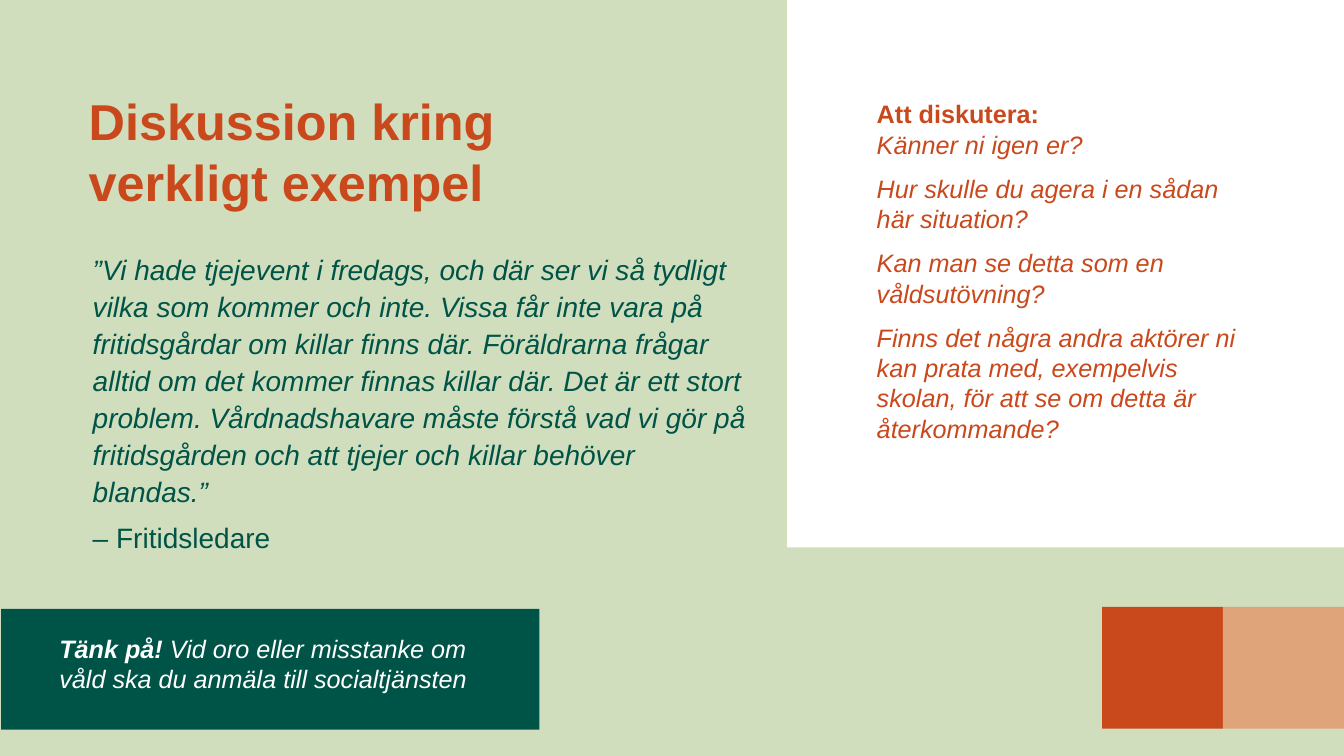
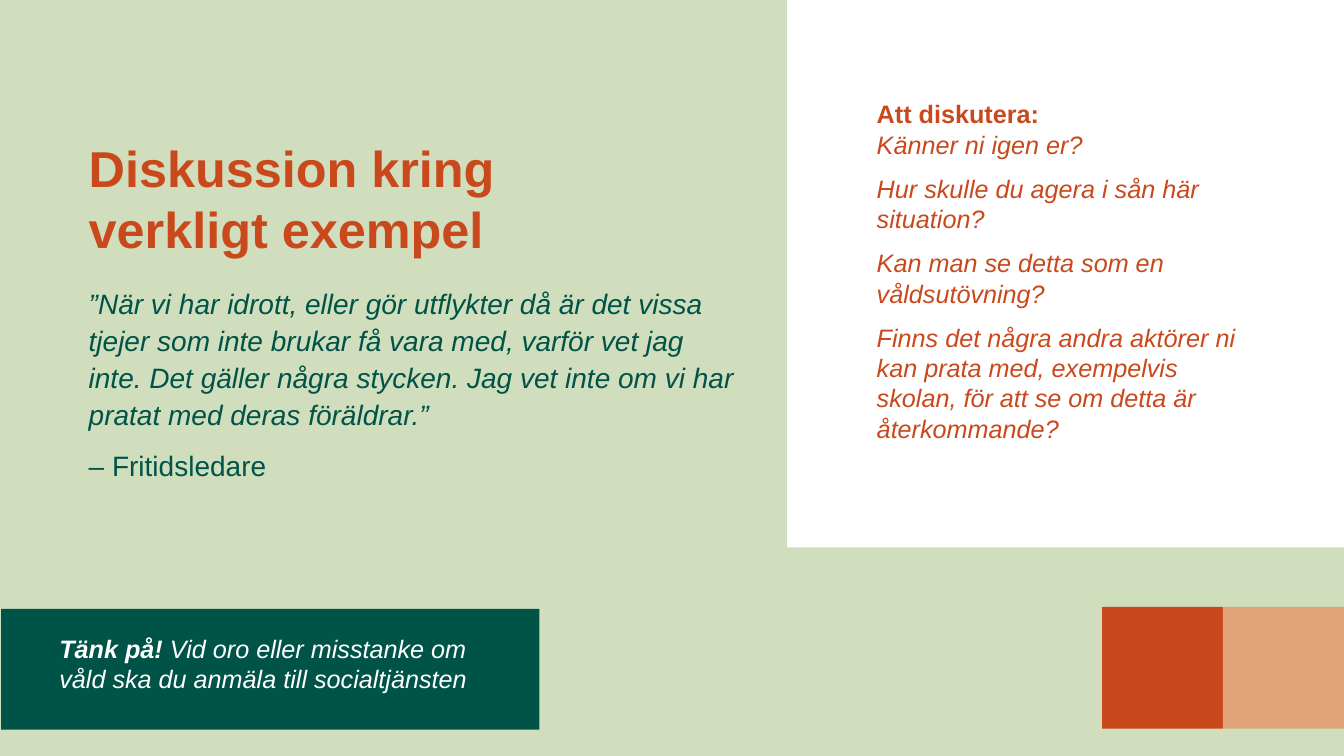
from dataclasses import dataclass
from typing import Any, NamedTuple

from lxml.etree import SubElement
from pptx import Presentation
from pptx.dml.color import RGBColor
from pptx.enum.shapes import MSO_SHAPE
from pptx.enum.text import MSO_ANCHOR, MSO_AUTO_SIZE, PP_ALIGN
from pptx.oxml.ns import qn
from pptx.util import Inches, Pt

W, H = Inches(13.333), Inches(7.5)


@dataclass(frozen=True)
class Theme:
    font: str = "Arial"
    sage: str = "D0DEBD"
    rust: str = "C9491C"
    sand: str = "DFA479"
    forest: str = "005447"
    white: str = "FFFFFF"
    title: int = 36
    quote: int = 20
    small: int = 18


class Box(NamedTuple):
    """Left, top, width and height in percent of the slide."""
    x: float
    y: float
    w: float
    h: float

    def emu(self) -> dict[str, int]:
        return {"left": round(W * self.x / 100), "top": round(H * self.y / 100),
                "width": round(W * self.w / 100), "height": round(H * self.h / 100)}


class Run(NamedTuple):
    text: str
    bold: bool = False
    italic: bool = False


class Para(NamedTuple):
    runs: list[Run]
    fmt: dict[str, Any] = {}


class Style(NamedTuple):
    size: int
    color: str


@dataclass(frozen=True)
class Discussion:
    title_box: Box
    quote_box: Box
    quote: str
    source_spacing: Any
    situation: str


T = Theme()
PANEL = Box(58.57, 0, 41.43, 72.4)
PROMPTS = Box(64.5, 12.4, 29.48, 53.2)
NOTE_BAND = Box(0.08, 80.53, 40.05, 16)
NOTE = Box(3.68, 83.07, 32.6, 13.47)
SQUARES = [(Box(82 + 9 * i, 80.27, 9, 16.13), c) for i, c in enumerate((T.rust, T.sand))]

DISCUSSIONS = [
    Discussion(
        Box(5.85, 3.47, 54.68, 25.2), Box(6.15, 32.27, 50.4, 34.93),
        "”Vi hade tjejevent i fredags, och där ser vi så tydligt vilka som kommer "
        "och inte. Vissa får inte vara på fritidsgårdar om killar finns där. "
        "Föräldrarna frågar alltid om det kommer finnas killar där. Det är ett "
        "stort problem. Vårdnadshavare måste förstå vad vi gör på fritidsgården "
        "och att tjejer och killar behöver blandas.”",
        Pt(23), "Hur skulle du agera i en sådan här situation?"),
    Discussion(
        Box(5.85, 9.73, 54.68, 25.2), Box(5.85, 36.8, 50.03, 43.2),
        "”När vi har idrott, eller gör utflykter då är det vissa tjejer som inte "
        "brukar få vara med, varför vet jag inte. Det gäller några stycken. Jag "
        "vet inte om vi har pratat med deras föräldrar.”",
        1.1, "Hur skulle du agera i sån här situation?"),
]


def apply(obj: Any, values: dict[str, Any]) -> None:
    for name, value in values.items():
        setattr(obj, name, value)


def add_rect(s: Any, box: Box, color: str) -> Any:
    sp = s.shapes.add_shape(MSO_SHAPE.RECTANGLE, **box.emu())
    sp.shadow.inherit = False
    sp.fill.solid()
    sp.fill.fore_color.rgb = RGBColor.from_string(color)
    sp.line.fill.background()
    return sp


def write(tf: Any, paras: list[Para], style: Style, anchor: Any = MSO_ANCHOR.TOP) -> None:
    apply(tf, {"word_wrap": True, "auto_size": MSO_AUTO_SIZE.NONE, "vertical_anchor": anchor})
    for i, para in enumerate(paras):
        p = tf.add_paragraph() if i else tf.paragraphs[0]
        pPr = p._p.get_or_add_pPr()
        apply(p, {"alignment": PP_ALIGN.LEFT, "space_before": Pt(10 if i else 0), **para.fmt})
        pPr.set("marL", "0")
        pPr.set("indent", "0")
        SubElement(pPr, qn("a:buNone"))
        for run in para.runs:
            for n, line in enumerate(run.text.split("\n")):
                if n:
                    p.add_line_break()
                if not line:
                    continue
                r = p.add_run()
                r.text = line
                apply(r.font, {"name": T.font, "size": Pt(style.size),
                               "bold": run.bold, "italic": run.italic})
                r.font.color.rgb = RGBColor.from_string(style.color)


def add_text(s: Any, box: Box, paras: list[Para], style: Style) -> None:
    write(s.shapes.add_textbox(**box.emu()).text_frame, paras, style)


def fill_placeholder(sp: Any, box: Box, paras: list[Para], style: Style,
                     anchor: Any = MSO_ANCHOR.TOP) -> None:
    apply(sp, box.emu())
    write(sp.text_frame, paras, style, anchor)


def decorate(layout: Any, s: Any) -> None:
    layout.background.fill.solid()
    layout.background.fill.fore_color.rgb = RGBColor.from_string(T.sage)
    for i, (box, color) in enumerate(SQUARES):
        sp = add_rect(s, box, color)
        sp.element.nvSpPr.cNvPr.set("id", str(100 + i))
        layout.shapes.element.append(sp.element)


def add_discussion(s: Any, d: Discussion) -> None:
    fill_placeholder(s.shapes.title, d.title_box,
                     [Para([Run("Diskussion kring\nverkligt exempel", bold=True)],
                           {"line_spacing": Pt(44)})],
                     Style(T.title, T.rust), MSO_ANCHOR.BOTTOM)
    fill_placeholder(s.placeholders[1], d.quote_box,
                     [Para([Run(d.quote, italic=True)], {"line_spacing": 1.1}),
                      Para([Run("– Fritidsledare")], {"line_spacing": d.source_spacing})],
                     Style(T.quote, T.forest))
    add_rect(s, PANEL, T.white)
    questions = [d.situation, "Kan man se detta som en våldsutövning?",
                 "Finns det några andra aktörer ni kan prata med, exempelvis skolan, "
                 "för att se om detta är återkommande?"]
    add_text(s, PROMPTS,
             [Para([Run("Att diskutera:\n", bold=True), Run("Känner ni igen er?", italic=True)]),
              *(Para([Run(q, italic=True)]) for q in questions)],
             Style(T.small, T.rust))
    add_rect(s, NOTE_BAND, T.forest)
    add_text(s, NOTE,
             [Para([Run("Tänk på! ", True, True),
                    Run("Vid oro eller misstanke om\nvåld ska du anmäla till socialtjänsten",
                        italic=True)])],
             Style(T.small, T.white))


def main() -> None:
    prs = Presentation()
    apply(prs, {"slide_width": W, "slide_height": H})
    layout = prs.slide_layouts[1]
    for i, d in enumerate(DISCUSSIONS):
        s = prs.slides.add_slide(layout)
        if i == 0:
            decorate(layout, s)
        add_discussion(s, d)
    prs.save("out.pptx")


if __name__ == "__main__":
    main()
